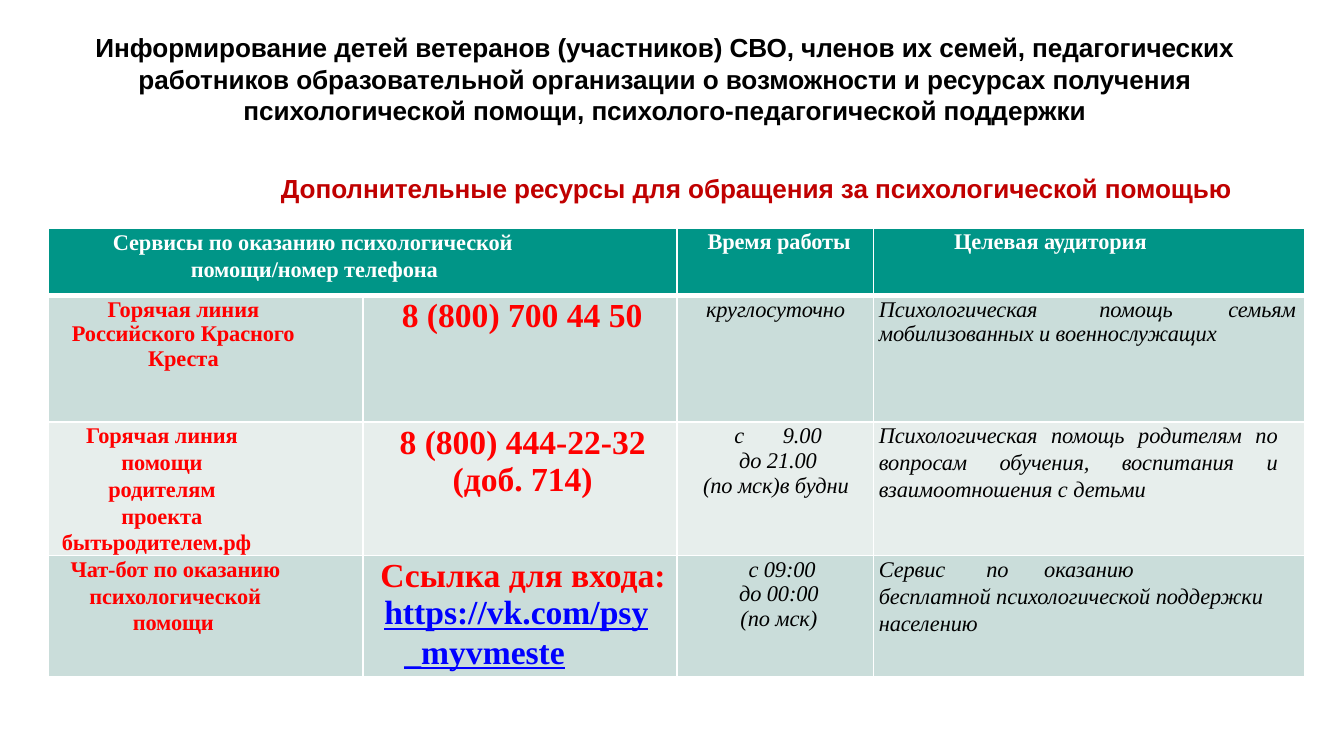
"""Builds a slide listing psychological support services in a table."""
import pptx
import pptx.dml.color
import pptx.enum.text
import pptx.oxml.ns
import pptx.util
from lxml import etree

Inches, Pt = pptx.util.Inches, pptx.util.Pt
ALIGN = pptx.enum.text.PP_ALIGN
LEFT, CENTER, RIGHT, JUSTIFY = ALIGN.LEFT, ALIGN.CENTER, ALIGN.RIGHT, ALIGN.JUSTIFY
SANS, SERIF = "Arial", "Times New Roman"
BLACK, WHITE, RED, BLUE, CRIMSON = "000000", "FFFFFF", "FF0000", "0000FF", "C00000"
TEAL, MINT, PALE = "009587", "CADDDA", "E7EEEC"


def rgb(value):
    """Return the colour of a hex string."""
    return pptx.dml.color.RGBColor.from_string(value)


def sub(parent, tag, **attrs):
    """Append a DrawingML element and return it."""
    el = etree.SubElement(parent, pptx.oxml.ns.qn("a:" + tag))
    for name, value in attrs.items():
        el.set(name, str(value))
    return el


def para(text, left=0, right=0, first=0, align=LEFT, leading=None, tabs=(), **font):
    """Describe one paragraph."""
    return dict(text=text, left=left, right=right, first=first, align=align,
                leading=leading, tabs=tabs, font=font)


class Deck:
    """Holds the style and the current slide."""

    def __init__(self, width):
        """Start a 16:9 presentation with one title-only slide."""
        self.prs = pptx.Presentation()
        self.prs.slide_width = Inches(width)
        self.prs.slide_height = Inches(width) * 9 // 16
        self.s = self.prs.slides.add_slide(self.prs.slide_layouts[5])

    def paragraph(self, p, item, size=12, color=BLACK, name=SERIF,
                  bold=False, italic=False, underline=False, spacing=-5):
        """Write and format one paragraph."""
        p.text = item["text"]
        p.alignment = item["align"]
        p.space_before = p.space_after = Pt(0)
        p.line_spacing = Pt(item["leading"]) if item["leading"] else 1.0
        pPr = p._p.get_or_add_pPr()
        for key, attr in (("left", "marL"), ("right", "marR"), ("first", "indent")):
            if item[key]:
                pPr.set(attr, str(Inches(item[key])))
        sub(pPr, "buNone")
        if item["tabs"]:
            tabs = sub(pPr, "tabLst")
            for pos in item["tabs"]:
                sub(tabs, "tab", pos=Inches(pos), algn="l")
        for r in p.runs:
            f = r.font
            f.size, f.name, f.color.rgb = Pt(size), name, rgb(color)
            f.bold, f.italic, f.underline = bold, italic, underline
            r._r.get_or_add_rPr().set("spc", str(spacing))

    def fill_frame(self, tf, items, **style):
        """Fill a text frame with paragraphs."""
        tf.word_wrap = True
        for i, item in enumerate(items):
            p = tf.paragraphs[0] if i == 0 else tf.add_paragraph()
            self.paragraph(p, item, **{**style, **item["font"]})

    def frame(self, sp, items, **style):
        """Format the text of a title or text box."""
        tf = sp.text_frame
        tf.margin_left = tf.margin_right = tf.margin_bottom = 0
        tf.margin_top = Inches(0.01)
        tf.vertical_anchor = pptx.enum.text.MSO_ANCHOR.TOP
        tf.auto_size = pptx.enum.text.MSO_AUTO_SIZE.NONE
        self.fill_frame(tf, items, **style)

    def title(self, at, item, **style):
        """Place the title."""
        sp = self.s.shapes.title
        sp.left, sp.top, sp.width, sp.height = map(Inches, at)
        self.frame(sp, [item], **style)

    def text(self, at, item, **style):
        """Add a text box."""
        self.frame(self.s.shapes.add_textbox(*map(Inches, at)), [item], **style)

    def cell(self, cell, items, fill, top, bottom, **style):
        """Fill a table cell and draw its borders."""
        cell.margin_left = cell.margin_right = cell.margin_top = cell.margin_bottom = 0
        self.fill_frame(cell.text_frame, items, **style)
        tcPr = cell._tc.get_or_add_tcPr()
        for side, width in (("lnL", 1), ("lnR", 1), ("lnT", top), ("lnB", bottom)):
            ln = sub(tcPr, side, w=Pt(width))
            sub(sub(ln, "solidFill"), "srgbClr", val=WHITE)
        cell.fill.solid()
        cell.fill.fore_color.rgb = rgb(fill)

    def table(self, at, cols, heights, rows, fills, header_style, column_styles):
        """Add a table whose header spans the first two columns."""
        t = self.s.shapes.add_table(len(rows), len(cols), *map(Inches, at)).table
        for col, width in zip(t.columns, cols):
            col.width = Inches(width)
        for row, height in zip(t.rows, heights):
            row.height = Inches(height)
        t.cell(0, 0).merge(t.cell(0, 1))
        for i, row in enumerate(rows):
            for j, items in enumerate(row):
                style = column_styles[j] if i else header_style
                self.cell(t.cell(i, j), items, fills[i], 3 if i == 1 else 1,
                          3 if i == 0 else 1, **style)


HEADER = [
    [para("Сервисы по оказанию психологической\vпомощи/номер телефона",
          left=1.06, first=-0.58, leading=14.4)],
    [],
    [para("Время работы", right=0.17, align=RIGHT, leading=14.1)],
    [para("Целевая аудитория", left=0.6, leading=14.1)],
]
RED_CROSS = [
    [para("Горячая линия", right=0.33, align=CENTER, leading=14.1),
     para("Российского Красного", right=0.33, align=CENTER),
     para("Креста", right=0.33, align=CENTER)],
    [para("8 (800) 700 44 50", left=0.29, leading=21.1)],
    [para("круглосуточно", right=0.21, align=RIGHT, leading=14.1)],
    [para("Психологическая\tпомощь\tсемьям", left=0.04, leading=14.1, tabs=(1.64, 2.6)),
     para("мобилизованных и военнослужащих", left=0.04)],
]
PARENTS = [
    [para("Горячая линия помощи родителям проекта", left=0.16, right=0.81,
          align=CENTER, leading=14.4),
     para("бытьродителем.рф", left=0.04, right=0.77, align=CENTER, leading=13.9)],
    [para("8 (800) 444-22-32", left=0.04, align=CENTER, leading=21.1),
     para("(доб. 714)", left=0.04, align=CENTER)],
    [para("с\t9.00", left=0.04, align=CENTER, leading=14.1, tabs=(0.36,)),
     para("до 21.00", left=0.04, align=CENTER),
     para("(по мск)в будни", left=0.01, align=CENTER)],
    [para("Психологическая помощь родителям по вопросам обучения, воспитания и "
          "взаимоотношения с детьми", left=0.04, right=0.2, align=JUSTIFY, leading=14.4)],
]
CHAT_BOT = [
    [para("Чат-бот по оказанию психологической", left=0.13, right=0.58,
          align=CENTER, leading=14.4),
     para("помощи", right=0.48, align=CENTER, leading=13.9)],
    [para("Ссылка для входа:", left=0.13, leading=21.1),
     para("https://vk.com/psy", left=0.16, color=BLUE, underline=True),
     para("_myvmeste", left=0.31, leading=21.1, color=BLUE, underline=True)],
    [para("с 09:00", left=0.53, leading=14.2),
     para("до 00:00", left=0.46),
     para("(по мск)", left=0.47)],
    [para("Сервис\tпо\tоказанию\vбесплатной психологической поддержки населению",
          left=0.04, leading=14.4, tabs=(0.8, 1.23, 2.16))],
]


def main():
    """Build and save the slide."""
    deck = Deck(10)
    heading = dict(size=14, name=SANS, bold=True)
    deck.title((0.35, 0.22, 9.15, 0.96), para(
        "Информирование детей ветеранов (участников) СВО, членов их семей, "
        "педагогических работников образовательной организации о возможности и "
        "ресурсах получения психологической помощи, психолого-педагогической поддержки",
        left=0.04, align=CENTER, leading=17), **heading)
    deck.text((2.08, 1.27, 7.7, 0.25), para(
        "Дополнительные ресурсы для обращения за психологической помощью",
        left=0.01), color=CRIMSON, **heading)
    service = dict(color=RED, bold=True)
    phone = dict(size=18, spacing=0, **service)
    note = dict(italic=True)
    deck.table((0.36, 1.7, 9.35, 3.33), (2.34, 2.34, 1.46, 3.21), (0.5, 0.94, 0.99, 0.9),
               (HEADER, RED_CROSS, PARENTS, CHAT_BOT), (TEAL, MINT, PALE, MINT),
               dict(color=WHITE, bold=True), (service, phone, note, note))
    deck.prs.save("out.pptx")


if __name__ == "__main__":
    main()
